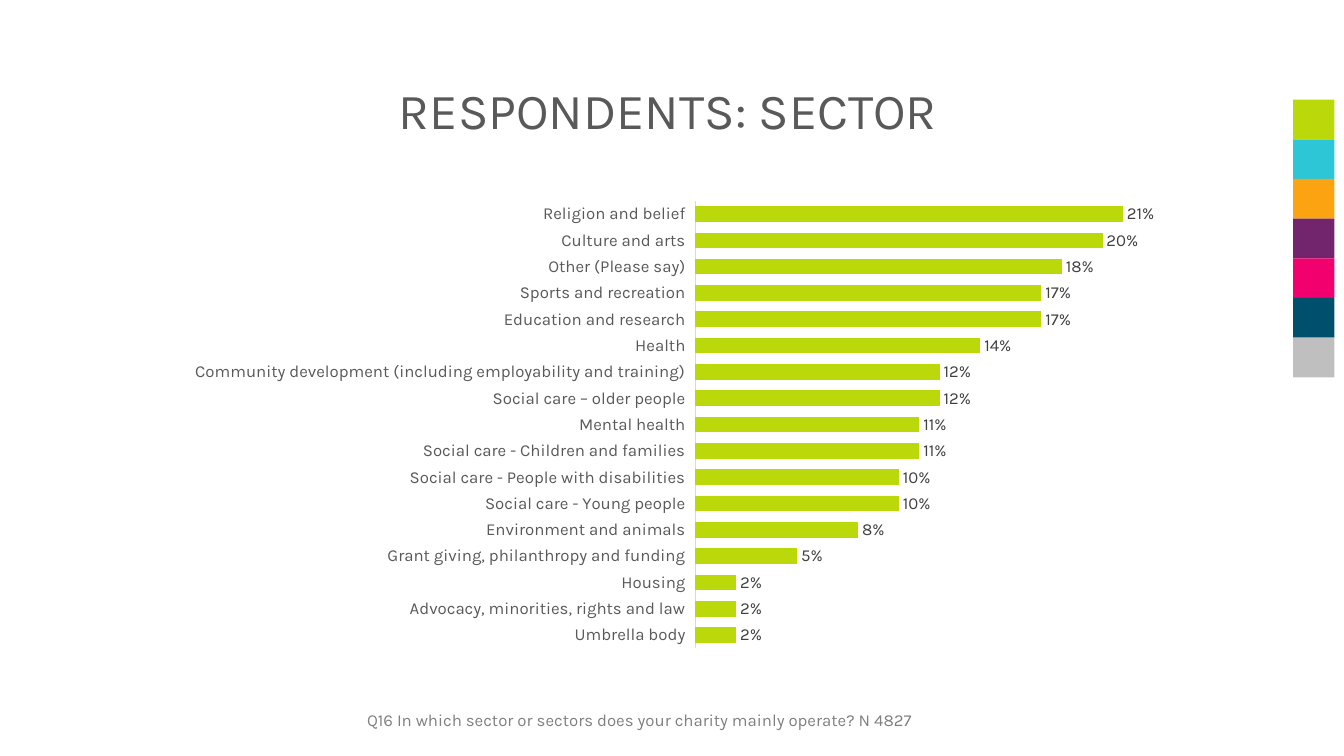
from lxml import etree
from pptx import Presentation
from pptx.chart.data import CategoryChartData
from pptx.dml.color import RGBColor
from pptx.enum.chart import XL_CHART_TYPE as ChartType
from pptx.enum.chart import XL_LABEL_POSITION as LabelPosition
from pptx.enum.chart import XL_TICK_LABEL_POSITION as TickLabelPosition
from pptx.enum.chart import XL_TICK_MARK as TickMark
from pptx.enum.shapes import MSO_SHAPE as Shape
from pptx.enum.text import MSO_ANCHOR as Anchor
from pptx.enum.text import PP_ALIGN as Align
from pptx.oxml.ns import qn
from pptx.util import Cm, Pt

LIME = "BAD80A"
PALETTE = [LIME, "2DC6D6", "FCA311", "72246C", "F2006E", "004F6D", "BFBFBF"]
SECTORS = {
    "Religion and belief": 0.21,
    "Culture and arts": 0.20,
    "Other (Please say)": 0.18,
    "Sports and recreation": 0.17,
    "Education and research": 0.17,
    "Health": 0.14,
    "Community development (including employability and training)": 0.12,
    "Social care – older people": 0.12,
    "Mental health": 0.11,
    "Social care - Children and families": 0.11,
    "Social care - People with disabilities": 0.10,
    "Social care - Young people": 0.10,
    "Environment and animals": 0.08,
    "Grant giving, philanthropy and funding": 0.05,
    "Housing": 0.02,
    "Advocacy, minorities, rights and law": 0.02,
    "Umbrella body": 0.02,
}


def rgb(value):
    """Turn a hex string into a colour."""
    return RGBColor.from_string(value)


class SlideBuilder:
    """Hold the current slide and its style, and add elements to it."""

    font_name = "Karla"

    def __init__(self, slide):
        """Keep the slide that is being built."""
        self.slide = slide

    def style(self, font, size, color):
        """Apply the house font with a size and colour."""
        font.name = self.font_name
        font.size = Pt(size)
        font.bold = False
        font.color.rgb = rgb(color)

    def fill_text(self, shape, text, size, color, anchor):
        """Fill a shape with one left-aligned paragraph."""
        frame = shape.text_frame
        frame.text = text
        frame.word_wrap = True
        frame.vertical_anchor = anchor
        paragraph = frame.paragraphs[0]
        paragraph.alignment = Align.LEFT
        self.style(paragraph.runs[0].font, size, color)
        return paragraph

    def title(self, text, left, top, width, height):
        """Place and fill the title placeholder."""
        shape = self.slide.shapes.title
        shape.left, shape.top = Cm(left), Cm(top)
        shape.width, shape.height = Cm(width), Cm(height)
        paragraph = self.fill_text(shape, text, 36, "595959", Anchor.MIDDLE)
        paragraph.line_spacing = 0.9

    def note(self, text, left, top, width, height):
        """Add a small grey text box."""
        shape = self.slide.shapes.add_textbox(Cm(left), Cm(top), Cm(width), Cm(height))
        self.fill_text(shape, text, 12, "808080", Anchor.TOP)

    def swatches(self, colors, left, top, width, height):
        """Stack colour blocks downwards."""
        for index, color in enumerate(colors):
            shape = self.slide.shapes.add_shape(
                Shape.RECTANGLE, Cm(left), Cm(top + index * height), Cm(width), Cm(height))
            shape.shadow.inherit = False
            shape.fill.solid()
            shape.fill.fore_color.rgb = rgb(color)
            shape.line.fill.background()

    def bar_chart(self, values, left, top, width, height, plot):
        """Add a horizontal bar chart with the first category on top."""
        data = CategoryChartData(number_format="0%")
        data.categories = list(values)
        data.add_series("Series 1", list(values.values()))
        chart = self.slide.shapes.add_chart(
            ChartType.BAR_CLUSTERED, Cm(left), Cm(top), Cm(width), Cm(height), data).chart
        chart.has_legend = False
        chart.has_title = False
        self.style(chart.font, 12, "595959")

        categories = chart.category_axis
        categories.reverse_order = True
        categories.major_tick_mark = TickMark.NONE
        categories.tick_label_position = TickLabelPosition.LOW
        categories.format.line.color.rgb = rgb("D9D9D9")
        categories.format.line.width = Pt(0.75)
        self.style(categories.tick_labels.font, 12, "595959")

        amounts = chart.value_axis
        amounts.minimum_scale, amounts.maximum_scale = 0, 0.25
        amounts.has_major_gridlines = False
        amounts.visible = False

        bars = chart.plots[0]
        bars.gap_width = 70
        bars.vary_by_categories = False
        fill = bars.series[0].format.fill
        fill.solid()
        fill.fore_color.rgb = rgb(LIME)
        labels = bars.series[0].data_labels
        labels.show_value = True
        labels.number_format = "0%"
        labels.number_format_is_linked = False
        labels.position = LabelPosition.OUTSIDE_END
        self.style(labels.font, 12, "404040")
        self.place_plot(chart, plot)

    def place_plot(self, chart, plot):
        """Fix the inner plot area as fractions of the chart."""
        area = chart.plots[0]._element.getparent()
        for old in area.findall(qn("c:layout")):
            area.remove(old)
        layout = etree.Element(qn("c:layout"))
        area.insert(0, layout)
        manual = etree.SubElement(layout, qn("c:manualLayout"))
        settings = [("layoutTarget", "inner"), ("xMode", "edge"), ("yMode", "edge")]
        settings += zip("xywh", plot)
        for name, value in settings:
            etree.SubElement(manual, qn(f"c:{name}")).set("val", str(value))


def main():
    """Build and save the slide."""
    presentation = Presentation()
    presentation.slide_width, presentation.slide_height = Cm(33.87), Cm(19.05)
    slide = presentation.slides.add_slide(presentation.slide_layouts[5])
    builder = SlideBuilder(slide)
    builder.swatches(PALETTE, 32.59, 2.51, 1.04, 1)
    builder.title("RESPONDENTS: SECTOR", 9.8, 1.02, 15.44, 3.68)
    builder.bar_chart(SECTORS, 4.7, 4.7, 25.65, 12, (0.5, 0.03, 0.5, 0.94))
    builder.note("Q16 In which sector or sectors does your charity mainly operate? N 4827",
                 9, 17.75, 14.48, 0.77)
    presentation.save("out.pptx")


if __name__ == "__main__":
    main()
